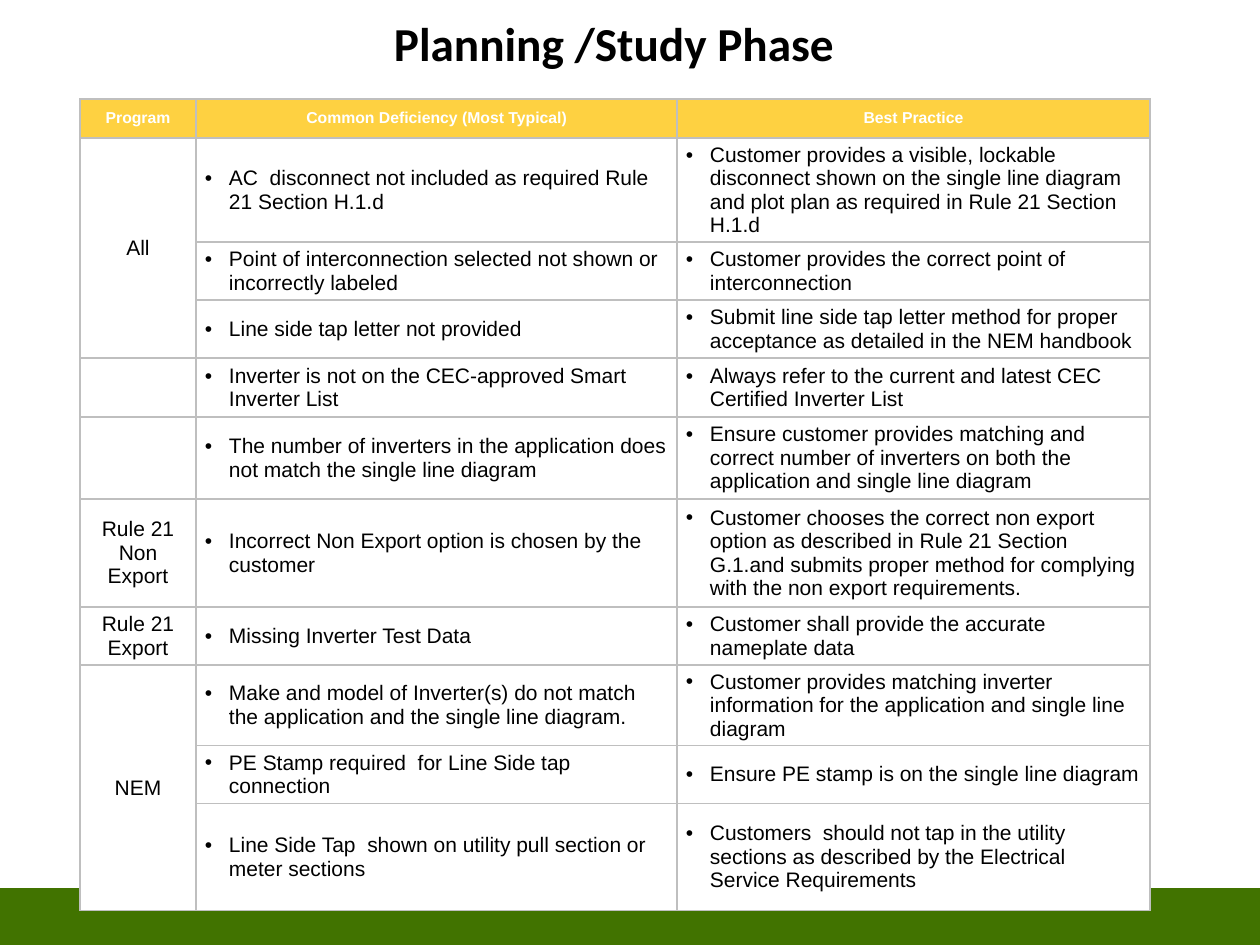
from lxml.etree import SubElement
from pptx import Presentation
from pptx.dml.color import RGBColor
from pptx.enum.shapes import MSO_SHAPE as Shape
from pptx.enum.text import MSO_ANCHOR as Anchor, PP_ALIGN as Align
from pptx.oxml import parse_xml
from pptx.oxml.ns import nsdecls, qn
from pptx.util import Pt

COLORS = {"green": "417300", "yellow": "FED141", "white": "FFFFFF",
          "black": "000000", "border": "BFBFBF"}
TITLE = "Planning /Study Phase"
HEADER = ("Program", "Common Deficiency (Most Typical)", "Best Practice")
PROGRAMS = [
    ("All", [
        (103, "AC  disconnect not included as required Rule 21 Section H.1.d",
         "Customer provides a visible, lockable disconnect shown on the single line "
         "diagram and plot plan as required in Rule 21 Section H.1.d"),
        (58, "Point of interconnection selected not shown or incorrectly labeled",
         "Customer provides the correct point of interconnection"),
        (58, "Line side tap letter not provided",
         "Submit line side tap letter method for proper acceptance as detailed in "
         "the NEM handbook"),
    ]),
    ("", [
        (59, "Inverter is not on the CEC-approved Smart Inverter List",
         "Always refer to the current and latest CEC Certified Inverter List"),
    ]),
    ("", [
        (82, "The number of inverters in the application does not match the single "
         "line diagram",
         "Ensure customer provides matching and correct number of inverters on both "
         "the application and single line diagram"),
    ]),
    ("Rule 21 Non Export", [
        (108, "Incorrect Non Export option is chosen by the customer",
         "Customer chooses the correct non export option as described in Rule 21 "
         "Section G.1.and submits proper method for complying with the non export "
         "requirements."),
    ]),
    ("Rule 21 Export", [
        (58, "Missing Inverter Test Data",
         "Customer shall provide the accurate nameplate data"),
    ]),
    ("NEM", [
        (80, "Make and model of Inverter(s) do not match the application and the "
         "single line diagram.",
         "Customer provides matching inverter information for the application and "
         "single line diagram"),
        (58, "PE Stamp required  for Line Side tap connection",
         "Ensure PE stamp is on the single line diagram"),
        (107, "Line Side Tap  shown on utility pull section or meter sections",
         "Customers  should not tap in the utility sections as described by the "
         "Electrical Service Requirements"),
    ]),
]
COLUMN_WIDTHS = (116, 481, 473)
HEADER_HEIGHT = 39
BULLET_INDENT = 24


def px(value):
    return round(value * 914400 / 126)


def rgb(name):
    return RGBColor.from_string(COLORS[name])


def style_font(font, name, size, color, bold):
    font.name, font.size, font.bold = name, Pt(size), bold
    font.color.rgb = rgb(color)


def add_bullet(para):
    props = para._p.get_or_add_pPr()
    props.set("marL", str(px(BULLET_INDENT)))
    props.set("indent", str(-px(BULLET_INDENT)))
    SubElement(props, qn("a:buFont")).set("typeface", "Arial")
    SubElement(props, qn("a:buChar")).set("char", "•")


def add_borders(cell):
    props = cell._tc.get_or_add_tcPr()
    for index, side in enumerate(("lnL", "lnR", "lnT", "lnB")):
        props.insert(index, parse_xml(
            f'<a:{side} {nsdecls("a")} w="12700"><a:solidFill>'
            f'<a:srgbClr val="{COLORS["border"]}"/></a:solidFill></a:{side}>'))


def fill_cell(cell, text, fill, size, color, bold=False, bullet=False):
    cell.fill.solid()
    cell.fill.fore_color.rgb = rgb(fill)
    add_borders(cell)
    cell.vertical_anchor = Anchor.MIDDLE
    cell.margin_left = cell.margin_right = px(9)
    cell.margin_top = cell.margin_bottom = px(5)
    cell.text_frame.text = text
    para = cell.text_frame.paragraphs[0]
    if bullet:
        add_bullet(para)
    para.alignment = Align.LEFT if bullet else Align.CENTER
    for span in para.runs:
        style_font(span.font, "Arial", size, color, bold)


def add_title(page):
    title = page.shapes.title
    title.left, title.top, title.width, title.height = map(px, (260, 11, 708, 71))
    frame = title.text_frame
    frame.text = TITLE
    frame.vertical_anchor = Anchor.MIDDLE
    para = frame.paragraphs[0]
    para.alignment, para.line_spacing = Align.CENTER, 0.9
    style_font(para.runs[0].font, "Calibri", 27, "black", True)


def add_footer_bar(page):
    bar = page.shapes.add_shape(Shape.RECTANGLE, 0, px(888), px(1260), px(57))
    bar.shadow.inherit = False
    bar.fill.solid()
    bar.fill.fore_color.rgb = rgb("green")
    bar.line.fill.background()


def add_program_table(page):
    heights = [HEADER_HEIGHT] + [row[0] for _, rows in PROGRAMS for row in rows]
    table = page.shapes.add_table(
        len(heights), len(COLUMN_WIDTHS), px(80), px(99),
        px(sum(COLUMN_WIDTHS)), px(sum(heights))).table
    table.horz_banding = False
    for column, width in zip(table.columns, COLUMN_WIDTHS):
        column.width = px(width)
    for row, height in zip(table.rows, heights):
        row.height = px(height)
    for index, heading in enumerate(HEADER):
        fill_cell(table.cell(0, index), heading, "yellow", 9, "white", bold=True)

    top = 1
    for program, rows in PROGRAMS:
        for offset, (_, deficiency, practice) in enumerate(rows):
            label = "" if offset else program
            for index, text in enumerate((label, deficiency, practice)):
                fill_cell(table.cell(top + offset, index), text, "white", 12,
                          "black", bullet=index > 0)
        if len(rows) > 1:
            table.cell(top, 0).merge(table.cell(top + len(rows) - 1, 0))
        top += len(rows)


def main():
    deck = Presentation()
    deck.slide_width, deck.slide_height = px(1260), px(945)
    page = deck.slides.add_slide(deck.slide_layouts[5])
    add_footer_bar(page)
    add_title(page)
    add_program_table(page)
    deck.save("out.pptx")


if __name__ == "__main__":
    main()
